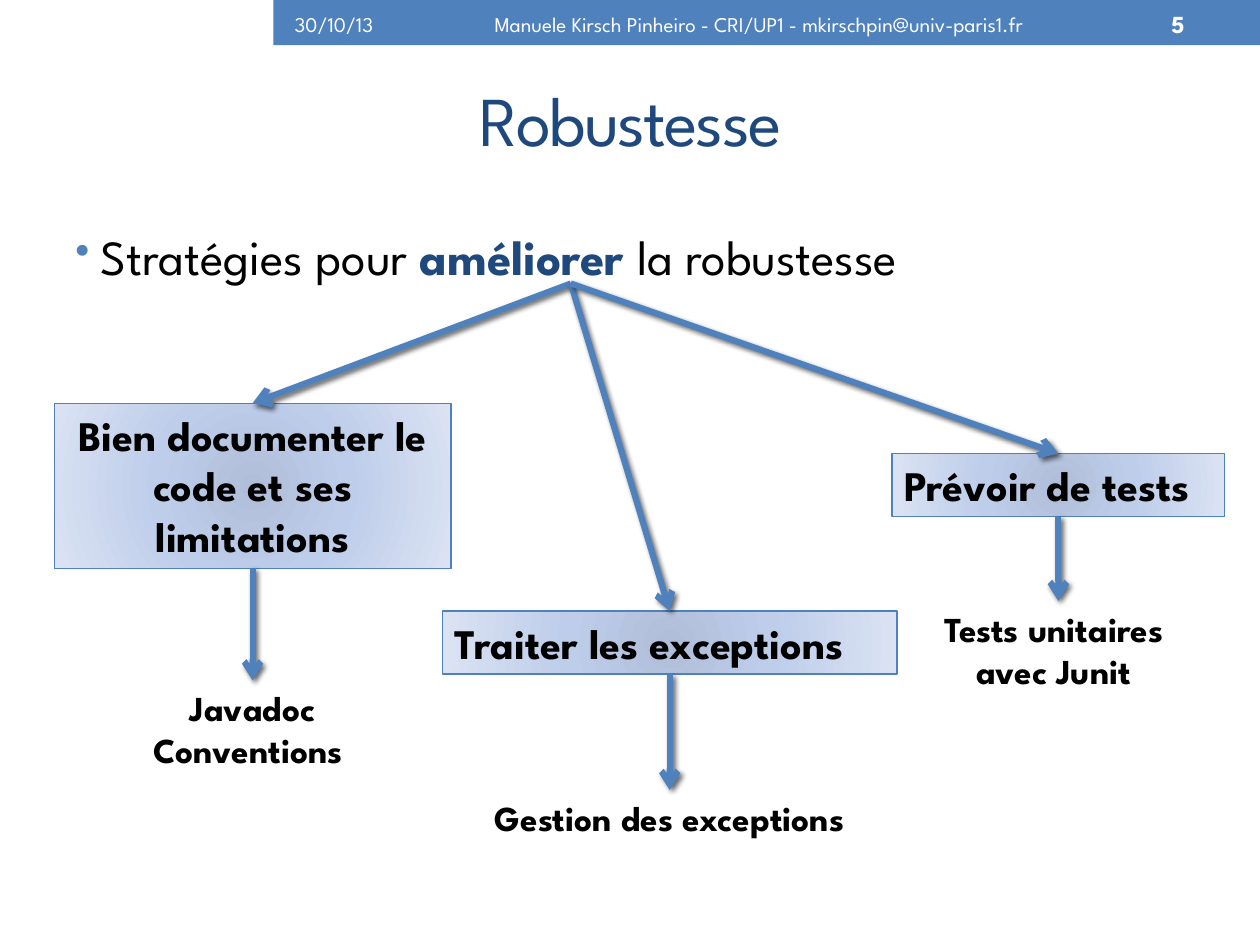
"""Build the slide on strategies for improving robustness."""
from lxml.etree import fromstring
from pptx import Presentation
from pptx.dml.color import RGBColor
from pptx.enum.shapes import MSO_CONNECTOR, MSO_SHAPE
from pptx.enum.text import MSO_ANCHOR, MSO_AUTO_SIZE, PP_ALIGN
from pptx.util import Inches, Pt

SPACE = 'xmlns:a="http://schemas.openxmlformats.org/drawingml/2006/main"'
BLUE, NAVY, WHITE, BLACK = "4F81BD", "1F497D", "FFFFFF", "000000"
LEFT, CENTER, RIGHT = PP_ALIGN.LEFT, PP_ALIGN.CENTER, PP_ALIGN.RIGHT
TOP, MIDDLE = MSO_ANCHOR.TOP, MSO_ANCHOR.MIDDLE
GRADIENT = f"""<a:gradFill {SPACE} rotWithShape="1"><a:gsLst>
<a:gs pos="0"><a:srgbClr val="B0BED9"/></a:gs>
<a:gs pos="45000"><a:srgbClr val="BECDEA"/></a:gs>
<a:gs pos="100000"><a:srgbClr val="DBE3F3"/></a:gs></a:gsLst>
<a:path path="circle"><a:fillToRect l="100000" t="100000" r="100000" b="100000"/></a:path>
</a:gradFill>"""
SHADOW = f"""<a:effectLst {SPACE}><a:outerShdw blurRad="38100" dist="25400" dir="2700000"
rotWithShape="0"><a:srgbClr val="000000"><a:alpha val="60000"/></a:srgbClr></a:outerShdw>
</a:effectLst>"""
BULLET = (
    f'<a:buClr {SPACE}><a:srgbClr val="{BLUE}"/></a:buClr>',
    f'<a:buSzPct {SPACE} val="85000"/>',
    f'<a:buChar {SPACE} char="•"/>',
)


def color(value):
    return RGBColor.from_string(value)


def write(box, lines, size, align=LEFT, anchor=TOP, wrap=True, grow=False):
    frame = box.text_frame
    layout = {
        "word_wrap": wrap,
        "vertical_anchor": anchor,
        "auto_size": MSO_AUTO_SIZE.SHAPE_TO_FIT_TEXT if grow else MSO_AUTO_SIZE.NONE,
    }
    for name, value in layout.items():
        setattr(frame, name, value)
    for index, spans in enumerate(lines):
        para = frame.add_paragraph() if index else frame.paragraphs[0]
        para.alignment = align
        for words, ink, bold in spans:
            for part, text in enumerate(words.split("\n")):
                if part:
                    para.add_line_break()
                span = para.add_run()
                span.text = text
                span.font.color.rgb = color(ink)
                style = {"name": "League Spartan", "size": Pt(size), "bold": bold}
                for name, value in style.items():
                    setattr(span.font, name, value)
    return frame.paragraphs[0]


deck = Presentation()
deck.slide_width, deck.slide_height = Inches(10), Inches(7.5)
page = deck.slides.add_slide(deck.slide_layouts[6])
shapes = page.shapes

banner = shapes.add_shape(MSO_SHAPE.RECTANGLE, Inches(2.17), 0, Inches(7.83), Inches(0.36))
banner.shadow.inherit = False
banner.fill.solid()
banner.fill.fore_color.rgb = color(BLUE)
banner.line.fill.background()

title = shapes.add_textbox(Inches(0.51), Inches(0.44), Inches(8.99), Inches(1))
heading = write(title, [[("Robustesse", NAVY, False)]], 40, CENTER, MIDDLE)
heading.runs[0].font._element.set("spc", "-100")

body = shapes.add_textbox(Inches(0.5), Inches(1.75), Inches(9), Inches(5.33))
strategy = write(body, [[("Stratégies pour ", BLACK, False), ("améliorer ", NAVY, True),
                         ("la robustesse", BLACK, False)]], 28)
properties = strategy._p.get_or_add_pPr()
properties.set("marL", str(Inches(0.2)))
properties.set("indent", str(Inches(-0.2)))
for mark in BULLET:
    properties.append(fromstring(mark))

header = [
    (2.24, 1.1, "30/10/13", 12, LEFT, False),
    (3.19, 5.67, "Manuele Kirsch Pinheiro - CRI/UP1 - mkirschpin@univ-paris1.fr", 12, CENTER, False),
    (8.94, 0.56, "5", 14, RIGHT, True),
]
for left, width, words, size, align, bold in header:
    box = shapes.add_textbox(Inches(left), Inches(0.02), Inches(width), Inches(0.34))
    write(box, [[(words, WHITE, bold)]], size, align, MIDDLE)

branches = [
    ((0.43, 3.2, 3.15, 1.31), "Bien documenter le code et ses limitations", CENTER, True,
     (1.05, 5.4, 1.91, 0.77), ["Javadoc", "Conventions "]),
    ((3.51, 4.85, 3.61, 0.5), "Traiter les exceptions", LEFT, False,
     (3.62, 6.27, 3.39, 0.44), ["Gestion des exceptions"]),
    ((7.08, 3.6, 2.64, 0.5), "Prévoir de tests", LEFT, False,
     (7.38, 4.77, 2.04, 0.77), ["Tests unitaires \navec Junit "]),
]
for place, words, align, wrap, label_place, label_lines in branches:
    step = shapes.add_shape(MSO_SHAPE.RECTANGLE, *map(Inches, place))
    step.shadow.inherit = False
    step.line.color.rgb = color(BLUE)
    step.line.width = Pt(0.75)
    step._element.spPr.prstGeom.addnext(fromstring(GRADIENT))
    write(step, [[(words, BLACK, True)]], 24, align, TOP, wrap, True)

    label = shapes.add_textbox(*map(Inches, label_place))
    write(label, [[(line, BLACK, True)] for line in label_lines], 20, CENTER, TOP, False, True)

    for source, target in ((None, step), (step, label)):
        arrow = shapes.add_connector(
            MSO_CONNECTOR.STRAIGHT, Inches(4.53), Inches(2.25), Inches(4.53), Inches(2.25))
        if source is not None:
            arrow.begin_connect(source, 2)
        arrow.end_connect(target, 0)
        arrow.line.color.rgb = color(BLUE)
        arrow.line.width = Pt(3.5)
        arrow.line._get_or_add_ln().append(fromstring(f'<a:tailEnd {SPACE} type="arrow"/>'))
        arrow._element.spPr.append(fromstring(SHADOW))

deck.save("out.pptx")
